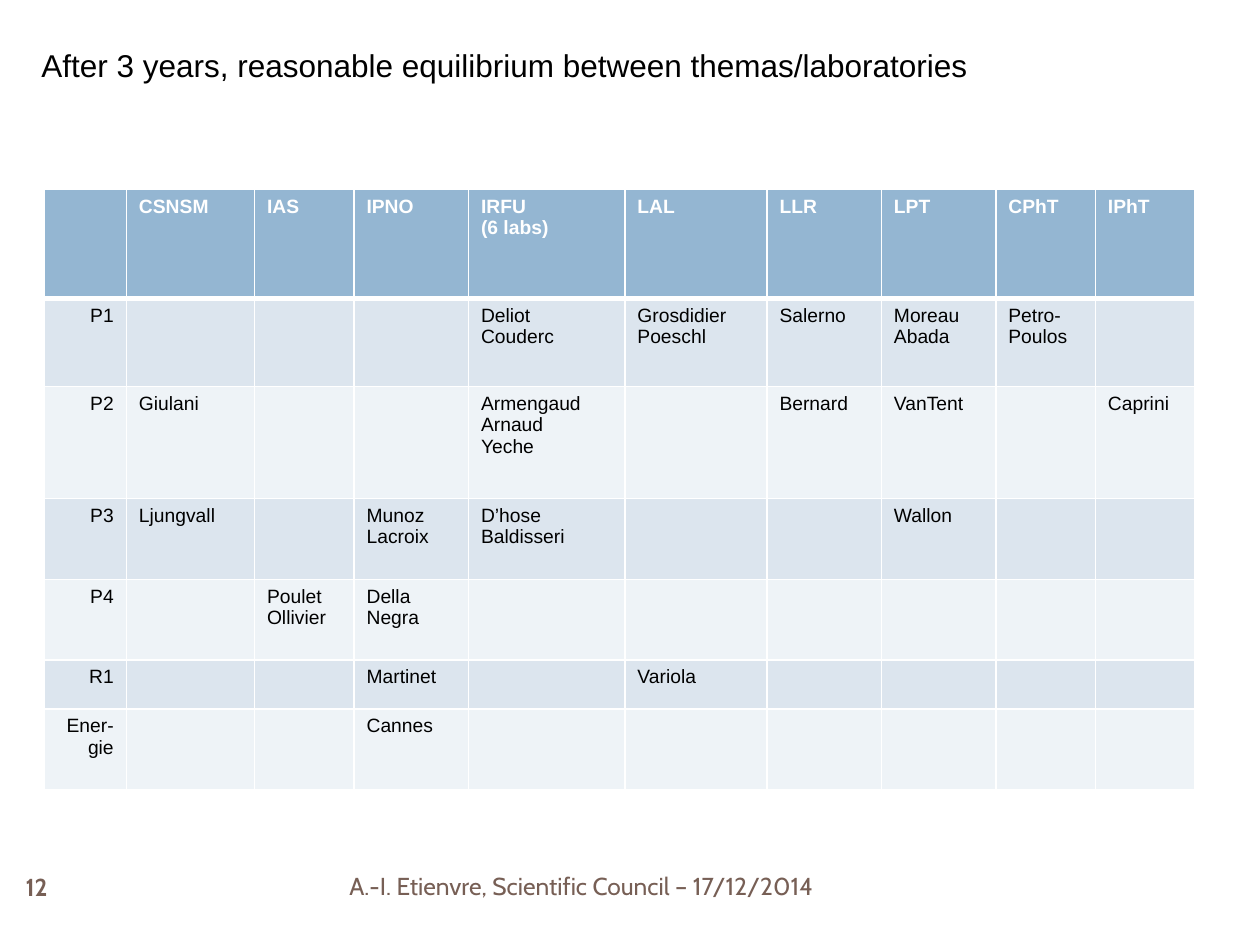
from dataclasses import dataclass

from lxml import etree
from pptx import Presentation
from pptx import util as u
from pptx.dml.color import RGBColor
from pptx.enum import text
from pptx.oxml import ns


@dataclass(frozen=True)
class Theme:
    body_font: str = "Arial"
    footer_font: str = "Cabin"
    ink: str = "000000"
    white: str = "FFFFFF"
    brown: str = "775F55"
    header: str = "94B6D2"
    bands: tuple[str, str] = ("DCE5EE", "EEF3F7")
    title_size: float = 18
    footer_size: float = 14
    table_size: float = 11
    rule: float = 1
    header_rule: float = 3


@dataclass(frozen=True)
class Style:
    font: str
    size: float
    color: str
    bold: bool = False


@dataclass(frozen=True)
class Label:
    wording: str
    left: float
    top: float
    width: float
    height: float
    style: Style
    align: text.PP_ALIGN
    anchor: text.MSO_ANCHOR


@dataclass(frozen=True)
class Thema:
    name: str
    height: float
    people: dict[str, list[str]]


THEME = Theme()
TITLE = Style(THEME.body_font, THEME.title_size, THEME.ink)
FOOTER = Style(THEME.footer_font, THEME.footer_size, THEME.brown)
PAGE = Style(THEME.footer_font, THEME.footer_size, THEME.brown, True)
HEADING = Style(THEME.body_font, THEME.table_size, THEME.white, True)
ENTRY = Style(THEME.body_font, THEME.table_size, THEME.ink)

LABELS = [
    Label("A.-I. Etienvre, Scientific Council – 17/12/2014 ", 48.2, 491.8, 427, 28.8,
          FOOTER, text.PP_ALIGN.RIGHT, text.MSO_ANCHOR.MIDDLE),
    Label("After 3 years, reasonable equilibrium between themas/laboratories",
          16.6, 23, 717, 28.8, TITLE, text.PP_ALIGN.LEFT, text.MSO_ANCHOR.TOP),
    Label("12", 0, 491.8, 41.8, 30.2, PAGE, text.PP_ALIGN.CENTER, text.MSO_ANCHOR.MIDDLE),
]

LAB_WIDTHS = {"CSNSM": 73.2, "IAS": 56.9, "IPNO": 65.4, "IRFU": 89.4, "LAL": 81.2,
              "LLR": 65.4, "LPT": 65.4, "CPhT": 56.9, "IPhT": 56.9}
LAB_NOTES = {"IRFU": ["(6 labs)"]}
THEMA_WIDTH = 46.8
HEADER_HEIGHT = 62.4
TABLE_LEFT, TABLE_TOP = 25.4, 108.2

THEMAS = [
    Thema("P1", 50.4, {"IRFU": ["Deliot", "Couderc"], "LAL": ["Grosdidier", "Poeschl"],
                       "LLR": ["Salerno"], "LPT": ["Moreau", "Abada"],
                       "CPhT": ["Petro-", "Poulos"]}),
    Thema("P2", 64, {"CSNSM": ["Giulani"], "IRFU": ["Armengaud", "Arnaud", "Yeche"],
                     "LLR": ["Bernard"], "LPT": ["VanTent"], "IPhT": ["Caprini"]}),
    Thema("P3", 46.1, {"CSNSM": ["Ljungvall"], "IPNO": ["Munoz", "Lacroix"],
                       "IRFU": ["D’hose", "Baldisseri"], "LPT": ["Wallon"]}),
    Thema("P4", 46.1, {"IAS": ["Poulet", "Ollivier"], "IPNO": ["Della", "Negra"]}),
    Thema("R1", 28.1, {"IPNO": ["Martinet"], "LAL": ["Variola"]}),
    Thema("Energie".replace("rg", "r-g"), 46.1, {"IPNO": ["Cannes"]}),
]


def write_lines(frame, lines: list[str], style: Style, align: text.PP_ALIGN) -> None:
    for index, line in enumerate(lines):
        paragraph = frame.add_paragraph() if index else frame.paragraphs[0]
        paragraph.alignment = align
        run = paragraph.add_run()
        run.text = line
        run.font.name = style.font
        run.font.size = u.Pt(style.size)
        run.font.bold = style.bold
        run.font.color.rgb = RGBColor.from_string(style.color)


def draw_label(slide, label: Label) -> None:
    box = slide.shapes.add_textbox(*map(u.Pt, (label.left, label.top, label.width, label.height)))
    frame = box.text_frame
    frame.word_wrap = True
    frame.vertical_anchor = label.anchor
    write_lines(frame, [label.wording], label.style, label.align)


def rule_cell(cell, widths: dict[str, float]) -> None:
    properties = cell._tc.get_or_add_tcPr()
    for side in ("L", "R", "T", "B"):
        line = etree.SubElement(properties, ns.qn(f"a:ln{side}"),
                                w=str(u.Pt(widths.get(side, THEME.rule))))
        fill = etree.SubElement(line, ns.qn("a:solidFill"))
        etree.SubElement(fill, ns.qn("a:srgbClr"), val=THEME.white)


def fill_cell(cell, lines: list[str], style: Style, align: text.PP_ALIGN,
              color: str, rules: dict[str, float]) -> None:
    rule_cell(cell, rules)
    cell.fill.solid()
    cell.fill.fore_color.rgb = RGBColor.from_string(color)
    write_lines(cell.text_frame, lines, style, align)
    if not lines:
        etree.SubElement(cell.text_frame.paragraphs[0]._p, ns.qn("a:endParaRPr"),
                         sz=str(round(style.size * 100)))


def draw_table(slide) -> None:
    widths = [THEMA_WIDTH, *LAB_WIDTHS.values()]
    heights = [HEADER_HEIGHT, *(thema.height for thema in THEMAS)]
    table = slide.shapes.add_table(
        len(heights), len(widths), u.Pt(TABLE_LEFT), u.Pt(TABLE_TOP),
        u.Pt(sum(widths)), u.Pt(sum(heights))).table
    table.first_row = table.horz_banding = False
    for column, width in zip(table.columns, widths):
        column.width = u.Pt(width)
    for row, height in zip(table.rows, heights):
        row.height = u.Pt(height)

    headings = [[], *([lab, *LAB_NOTES.get(lab, [])] for lab in LAB_WIDTHS)]
    for column, lines in enumerate(headings):
        fill_cell(table.cell(0, column), lines, HEADING, text.PP_ALIGN.JUSTIFY,
                  THEME.header, {"B": THEME.header_rule})
    for row, thema in enumerate(THEMAS, 1):
        band = THEME.bands[(row - 1) % 2]
        rules = {"T": THEME.header_rule} if row == 1 else {}
        fill_cell(table.cell(row, 0), [thema.name], ENTRY, text.PP_ALIGN.RIGHT, band, rules)
        for column, lab in enumerate(LAB_WIDTHS, 1):
            fill_cell(table.cell(row, column), thema.people.get(lab, []), ENTRY,
                      text.PP_ALIGN.JUSTIFY, band, rules)


def main() -> None:
    deck = Presentation()
    deck.slide_width, deck.slide_height = u.Pt(720), u.Pt(540)
    slide = deck.slides.add_slide(deck.slide_layouts[6])
    for label in LABELS:
        draw_label(slide, label)
    draw_table(slide)
    deck.save("out.pptx")


if __name__ == "__main__":
    main()
